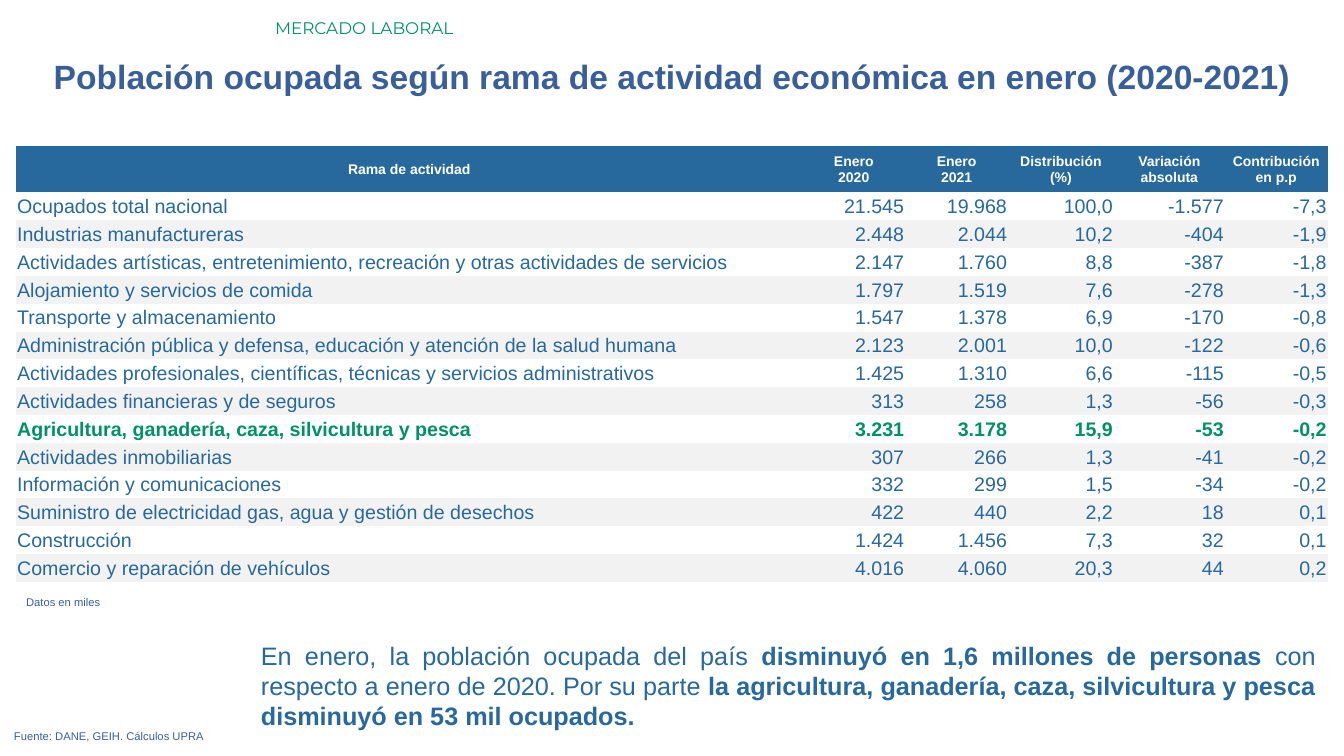
"""Build the slide on employed population by branch of activity."""
import pptx
import pptx.dml.color
import pptx.enum.text
import pptx.oxml.ns
import pptx.util

SLIDE_WIDTH = pptx.util.Inches(13.33)
SLIDE_HEIGHT = pptx.util.Inches(7.5)

BLUE = pptx.dml.color.RGBColor(0x27, 0x68, 0x9D)
NAVY = pptx.dml.color.RGBColor(0x39, 0x5F, 0x9B)
GREEN = pptx.dml.color.RGBColor(0x00, 0x92, 0x67)
WHITE = pptx.dml.color.RGBColor(0xFF, 0xFF, 0xFF)
BAND = pptx.dml.color.RGBColor(0xF2, 0xF2, 0xF2)

ALIGN = pptx.enum.text.PP_ALIGN
PLAIN_TABLE_STYLE = "{2D5ABB26-0587-4C30-8999-92F81FD0307C}"
CELL_FORMAT = {
    "vertical_anchor": pptx.enum.text.MSO_ANCHOR.MIDDLE,
    "margin_left": pptx.util.Inches(0.01),
    "margin_right": pptx.util.Inches(0.01),
    "margin_top": pptx.util.Inches(0.01),
    "margin_bottom": 0,
}

COLUMN_SHARES = [58.5, 7.65, 7.65, 7.88, 8.25, 7.65]
HEADER_SHARE = 6.13
ROW_SHARE = 3.68
HEADERS = ["Rama de actividad", "Enero\v2020", "Enero\v2021",
           "Distribución\n(%)", "Variación\nabsoluta", "Contribución\nen p.p"]
HIGHLIGHT = "Agricultura, ganadería, caza, silvicultura y pesca"
BRANCHES = [
    ["Ocupados total nacional", "21.545", "19.968", "100,0", "-1.577", "-7,3"],
    ["Industrias manufactureras", "2.448", "2.044", "10,2", "-404", "-1,9"],
    ["Actividades artísticas, entretenimiento, recreación y otras actividades de servicios",
     "2.147", "1.760", "8,8", "-387", "-1,8"],
    ["Alojamiento y servicios de comida", "1.797", "1.519", "7,6", "-278", "-1,3"],
    ["Transporte y almacenamiento", "1.547", "1.378", "6,9", "-170", "-0,8"],
    ["Administración pública y defensa, educación y atención de la salud humana",
     "2.123", "2.001", "10,0", "-122", "-0,6"],
    ["Actividades profesionales, científicas, técnicas y servicios administrativos",
     "1.425", "1.310", "6,6", "-115", "-0,5"],
    ["Actividades financieras y de seguros", "313", "258", "1,3", "-56", "-0,3"],
    [HIGHLIGHT, "3.231", "3.178", "15,9", "-53", "-0,2"],
    ["Actividades inmobiliarias", "307", "266", "1,3", "-41", "-0,2"],
    ["Información y comunicaciones", "332", "299", "1,5", "-34", "-0,2"],
    ["Suministro de electricidad gas, agua y gestión de desechos",
     "422", "440", "2,2", "18", "0,1"],
    ["Construcción", "1.424", "1.456", "7,3", "32", "0,1"],
    ["Comercio y reparación de vehículos", "4.016", "4.060", "20,3", "44", "0,2"],
]


def across(percent):
    """Return a percentage of the slide's width."""
    return round(SLIDE_WIDTH * percent / 100)


def down(percent):
    """Return a percentage of the slide's height."""
    return round(SLIDE_HEIGHT * percent / 100)


def set_values(target, values):
    """Set each named attribute of the target."""
    for name, value in values.items():
        setattr(target, name, value)


def set_font(font, size, color, bold=False, name="Arial"):
    """Set the face, size, weight and colour of a font."""
    set_values(font, {"name": name, "size": pptx.util.Pt(size), "bold": bold})
    font.color.rgb = color


def add_text(slide, area, runs, size, color, align=ALIGN.JUSTIFY, name="Arial"):
    """Add a one-paragraph text box from (text, bold) runs."""
    left, top, width, height = area
    box = slide.shapes.add_textbox(across(left), down(top), across(width), down(height))
    set_values(box.text_frame, {
        "word_wrap": True,
        "auto_size": pptx.enum.text.MSO_AUTO_SIZE.SHAPE_TO_FIT_TEXT,
    })
    paragraph = box.text_frame.paragraphs[0]
    paragraph.alignment = align
    for text, bold in runs:
        run = paragraph.add_run()
        run.text = text
        set_font(run.font, size, color, bold, name)


def fill_cell(cell, text, align, size, color, bold, fill):
    """Write and format one table cell."""
    set_values(cell, CELL_FORMAT)
    cell.text_frame.text = text
    for paragraph in cell.text_frame.paragraphs:
        paragraph.alignment = align
        for run in paragraph.runs:
            set_font(run.font, size, color, bold)
    if fill is None:
        cell.fill.background()
    else:
        cell.fill.solid()
        cell.fill.fore_color.rgb = fill


def add_branch_table(slide, left, top):
    """Add the table of branches of activity."""
    row_shares = [HEADER_SHARE] + [ROW_SHARE] * len(BRANCHES)
    frame = slide.shapes.add_table(
        len(row_shares), len(COLUMN_SHARES), across(left), down(top),
        across(sum(COLUMN_SHARES)), down(sum(row_shares)))
    table = frame.table
    style = next(frame._element.iter(pptx.oxml.ns.qn("a:tableStyleId")))
    style.text = PLAIN_TABLE_STYLE
    for column, share in zip(table.columns, COLUMN_SHARES):
        column.width = across(share)
    for row, share in zip(table.rows, row_shares):
        row.height = down(share)
    for column, text in enumerate(HEADERS):
        fill_cell(table.cell(0, column), text, ALIGN.CENTER, 10, WHITE, True, BLUE)
    for row, values in enumerate(BRANCHES, start=1):
        bold = values[0] == HIGHLIGHT
        color = GREEN if bold else BLUE
        fill = BAND if row % 2 == 0 else None
        for column, text in enumerate(values):
            align = ALIGN.RIGHT if column else ALIGN.LEFT
            fill_cell(table.cell(row, column), text, align, 14, color, bold, fill)


def main():
    """Build and save the presentation."""
    presentation = pptx.Presentation()
    set_values(presentation, {"slide_width": SLIDE_WIDTH, "slide_height": SLIDE_HEIGHT})
    slide = presentation.slides.add_slide(presentation.slide_layouts[6])
    add_text(slide, (19.73, 1.73, 80.27, 4), [("MERCADO LABORAL", False)],
             12, GREEN, ALIGN.LEFT, "Montserrat")
    add_text(slide, (0, 6.67, 100, 6.67),
             [("Población ocupada según rama de actividad económica en enero (2020-2021)", True)],
             24, NAVY, ALIGN.CENTER)
    add_text(slide, (18.68, 84, 79.95, 13.47), [
        ("En enero, la población ocupada del país ", False),
        ("disminuyó en 1,6 millones de personas ", True),
        ("con respecto a enero de 2020. Por su parte ", False),
        ("la agricultura, ganadería, caza, silvicultura y pesca "
         "disminuyó en 53 mil ocupados.", True),
    ], 18, BLUE)
    add_text(slide, (0.3, 95.87, 96.83, 3.2),
             [("Fuente: DANE, GEIH. Cálculos UPRA", False)], 8, NAVY)
    add_branch_table(slide, 1.2, 19.33)
    add_text(slide, (1.2, 78.13, 96.83, 3.2), [("Datos en miles", False)], 8, NAVY)
    presentation.save("out.pptx")


if __name__ == "__main__":
    main()
